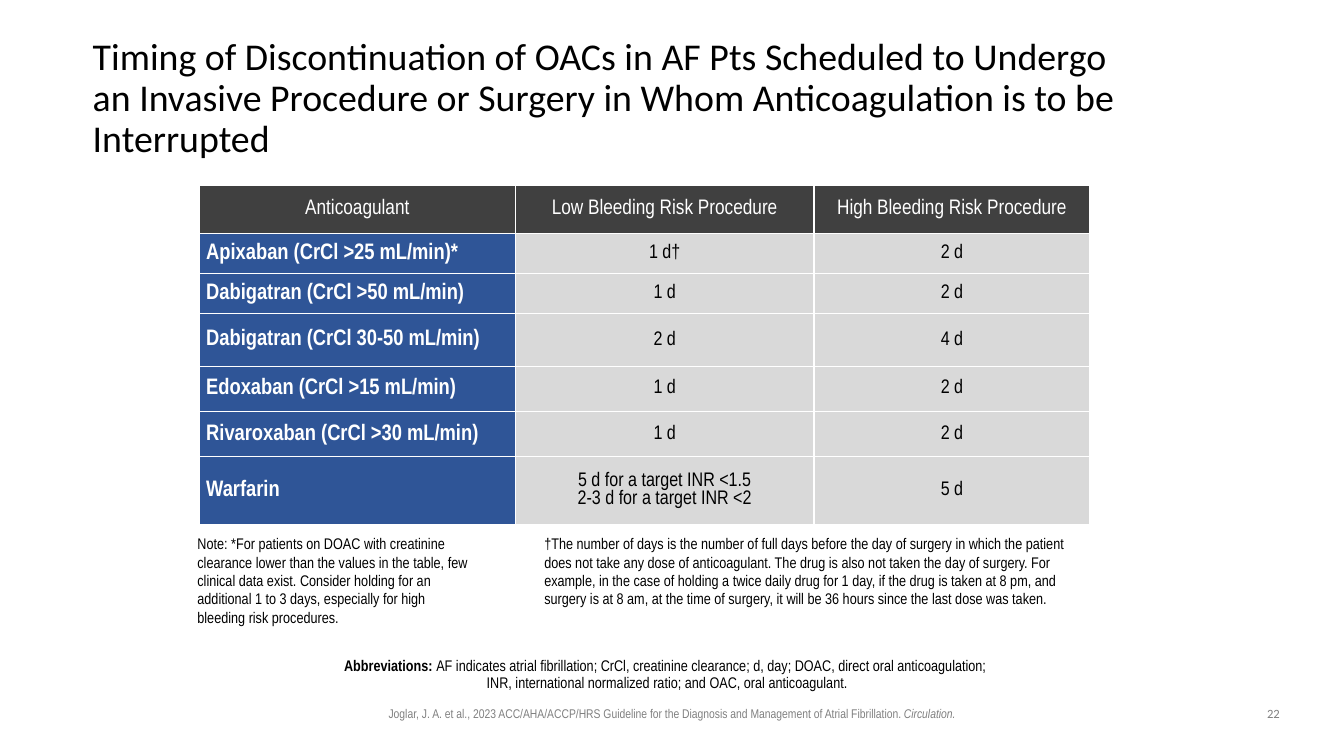
from lxml import etree
from pptx import Presentation
from pptx.dml.color import RGBColor
from pptx.enum.text import MSO_ANCHOR, PP_ALIGN
from pptx.oxml.ns import qn
from pptx.util import Inches, Pt

LEFT, CENTER = PP_ALIGN.LEFT, PP_ALIGN.CENTER
TOP, MIDDLE = MSO_ANCHOR.TOP, MSO_ANCHOR.MIDDLE
BLACK = RGBColor(0x00, 0x00, 0x00)
WHITE = RGBColor(0xFF, 0xFF, 0xFF)
GRAY = RGBColor(0x80, 0x80, 0x80)
HEADER_FILL = RGBColor(0x40, 0x40, 0x40)
DRUG_FILL = RGBColor(0x2F, 0x55, 0x97)
TIMING_FILL = RGBColor(0xD9, 0xD9, 0xD9)
NARROW, SANS = "Arial Narrow", "Calibri"
WIDTH, HEIGHT = Inches(13.33), Inches(7.5)
BOX_INSETS = (0.1, 0.05, 0.1, 0.05)
HEADER_INSETS = (0.12, 0.06, 0.12, 0.06)
BODY_INSETS = (0.07, 0, 0.07, 0)

COLUMNS = (23.54, 22.2, 20.55)
ROWS = (6.3, 5.33, 5.33, 6.93, 6, 6, 8.93)
TIMINGS = (
    ("Anticoagulant", "Low Bleeding Risk Procedure", "High Bleeding Risk Procedure"),
    ("Apixaban (CrCl >25 mL/min)*", "1 d†", "2 d"),
    ("Dabigatran (CrCl >50 mL/min)", "1 d", "2 d"),
    ("Dabigatran (CrCl 30-50 mL/min)", "2 d", "4 d"),
    ("Edoxaban (CrCl >15 mL/min)", "1 d", "2 d"),
    ("Rivaroxaban (CrCl >30 mL/min)", "1 d", "2 d"),
    ("Warfarin", "5 d for a target INR <1.5\n2-3 d for a target INR <2", "5 d"),
)
TITLE = (
    "Timing of Discontinuation of OACs in AF Pts Scheduled to Undergo an Invasive "
    "Procedure or Surgery in Whom Anticoagulation is to be Interrupted"
)
CLEARANCE_NOTE = (
    "Note: *For patients on DOAC with creatinine clearance lower than the values in "
    "the table, few clinical data exist. Consider holding for an additional 1 to 3 "
    "days, especially for high bleeding risk procedures."
)
DAYS_NOTE = (
    "†The number of days is the number of full days before the day of surgery in which "
    "the patient does not take any dose of anticoagulant. The drug is also not taken "
    "the day of surgery. For example, in the case of holding a twice daily drug for "
    "1 day, if the drug is taken at 8 pm, and surgery is at 8 am, at the time of "
    "surgery, it will be 36 hours since the last dose was taken."
)
ABBREVIATIONS = (
    "AF indicates atrial fibrillation; CrCl, creatinine clearance; d, day; DOAC, direct "
    "oral anticoagulation; \nINR, international normalized ratio; and OAC, oral anticoagulant."
)
CITATION = (
    "Joglar, J. A. et al., 2023 ACC/AHA/ACCP/HRS Guideline for the Diagnosis and "
    "Management of Atrial Fibrillation. "
)


def across(percent):
    return int(WIDTH * percent / 100)


def down(percent):
    return int(HEIGHT * percent / 100)


def set_insets(target, insets):
    target.margin_left, target.margin_top, target.margin_right, target.margin_bottom = (
        Inches(inset) for inset in insets
    )


def add_run(p, text, size, color, font=NARROW, bold=False, italic=False):
    for i, line in enumerate(text.split("\n")):
        if i:
            p.add_line_break()
        r = p.add_run()
        r.text = line
        r.font.name, r.font.size = font, Pt(size)
        r.font.bold, r.font.italic = bold, italic
        r.font.color.rgb = color


def add_text(s, box, align=LEFT, anchor=TOP, insets=BOX_INSETS, spacing=1.0):
    x, y, w, h = box
    sp = s.shapes.add_textbox(across(x), down(y), across(w), down(h))
    tf = sp.text_frame
    tf.word_wrap = True
    tf.vertical_anchor = anchor
    set_insets(tf, insets)
    p = tf.paragraphs[0]
    p.alignment, p.line_spacing = align, spacing
    return p


def add_borders(cell):
    tc_pr = cell._tc.get_or_add_tcPr()
    for side in ("a:lnL", "a:lnR", "a:lnT", "a:lnB"):
        ln = etree.SubElement(tc_pr, qn(side), w=str(Pt(1)))
        fill = etree.SubElement(ln, qn("a:solidFill"))
        etree.SubElement(fill, qn("a:srgbClr"), val=str(WHITE))


def fill_cell(cell, text, fill, size, color, align, insets, bold):
    add_borders(cell)
    cell.fill.solid()
    cell.fill.fore_color.rgb = fill
    cell.vertical_anchor = MIDDLE
    set_insets(cell, insets)
    p = cell.text_frame.paragraphs[0]
    p.alignment, p.line_spacing = align, 1.0
    add_run(p, text, size, color, bold=bold)


def add_timing_table(s, x, y):
    frame = s.shapes.add_table(
        len(ROWS), len(COLUMNS), across(x), down(y), across(sum(COLUMNS)), down(sum(ROWS))
    )
    table = frame.table
    table.first_row = table.horz_banding = False
    for column, share in zip(table.columns, COLUMNS):
        column.width = across(share)
    for row, share in zip(table.rows, ROWS):
        row.height = down(share)
    for i, texts in enumerate(TIMINGS):
        for j, text in enumerate(texts):
            if i == 0:
                style = (HEADER_FILL, 15, WHITE, CENTER, HEADER_INSETS, False)
            elif j == 0:
                style = (DRUG_FILL, 16, WHITE, LEFT, BODY_INSETS, True)
            else:
                style = (TIMING_FILL, 14, BLACK, CENTER, BODY_INSETS, False)
            fill_cell(table.cell(i, j), text, *style)


def main():
    prs = Presentation()
    prs.slide_width, prs.slide_height = WIDTH, HEIGHT
    s = prs.slides.add_slide(prs.slide_layouts[6])

    p = add_text(s, (22.06, 92.67, 55.89, 3.33), CENTER)
    add_run(p, CITATION, 9, GRAY)
    add_run(p, "Circulation.", 9, GRAY, italic=True)

    p = add_text(s, (6.9, 5.33, 77.2, 15.6), anchor=MIDDLE, insets=(0, 0, 0, 0), spacing=0.9)
    add_run(p, TITLE, 27, BLACK, SANS)

    add_timing_table(s, 14.82, 24.55)

    for x, width, note in ((13.95, 21.9, CLEARANCE_NOTE), (39.76, 42, DAYS_NOTE)):
        add_run(add_text(s, (x, 70, width, 13.73)), note, 11, BLACK)

    p = add_text(s, (15, 86.4, 70.07, 5.2), CENTER, insets=(0, 0.05, 0.1, 0.05), spacing=0.9)
    add_run(p, "Abbreviations: ", 11, BLACK, bold=True)
    add_run(p, ABBREVIATIONS, 11, BLACK)

    p = add_text(s, (93.17, 92.67, 3.15, 3.47), CENTER)
    add_run(p, "22", 9, GRAY, SANS)

    prs.save("out.pptx")


if __name__ == "__main__":
    main()
